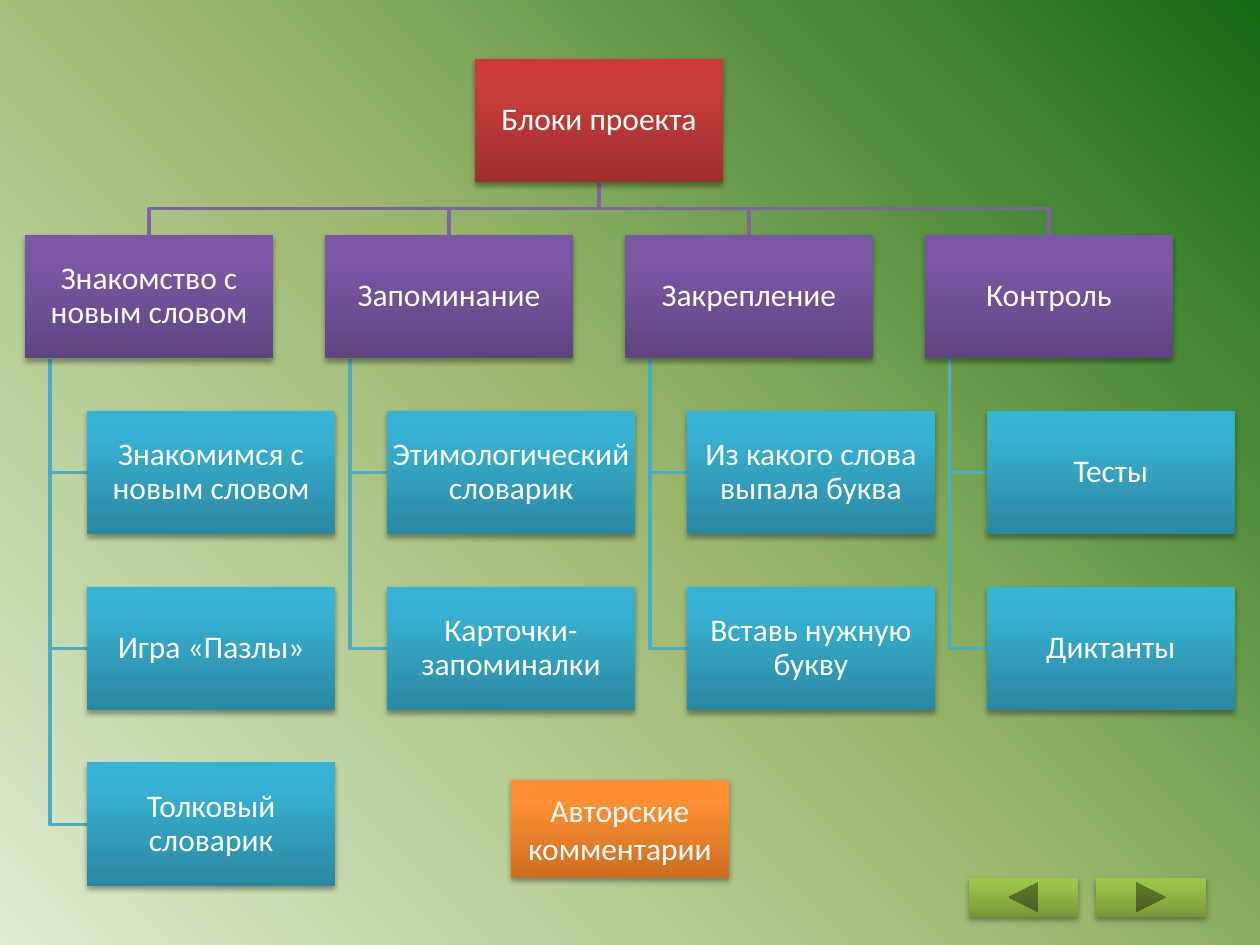
from dataclasses import dataclass
from lxml.etree import SubElement
from pptx import Presentation
from pptx.dml.color import RGBColor
from pptx.enum.shapes import MSO_SHAPE
from pptx.enum.text import MSO_ANCHOR, PP_ALIGN
from pptx.oxml.ns import qn
from pptx.util import Pt


@dataclass(frozen=True)
class Theme:
    font: str = "Calibri"
    size: float = 18
    line: float = 2
    text: str = "FFFFFF"
    shade: str = "000000"
    back: tuple = ((0, "DDEBCF"), (50, "9CB86E"), (100, "156B13"))
    red: tuple = ((0, "9C2F2D"), (80, "CB3E3A"), (100, "CE3B37"))
    purple: tuple = ((0, "5F4480"), (80, "7B58A6"), (100, "7C57A8"))
    blue: tuple = ((0, "2A88A2"), (80, "37B1D2"), (100, "34B4D6"))
    green: tuple = ((0, "779737"), (80, "9BC348"), (100, "9DC746"))
    orange: tuple = ((0, "CC6E20"), (80, "FF9034"), (100, "FF9136"))
    branch: str = "8064A2"
    twig: str = "4BACC6"


THEME = Theme()
ROOT = "Блоки проекта"
BLOCKS = {
    "Знакомство с новым словом": [
        "Знакомимся с новым словом", "Игра «Пазлы»", "Толковый словарик"],
    "Запоминание": ["Этимологический словарик", "Карточки-запоминалки"],
    "Закрепление": ["Из какого слова выпала буква", "Вставь нужную букву"],
    "Контроль": ["Тесты", "Диктанты"],
}


def blend(fill, owner, stops, angle):
    """Give fill, which lies inside the XML of owner, a linear gradient."""
    fill.gradient()
    fill.gradient_angle = angle
    group = owner.find(".//" + qn("a:gsLst"))
    for old in list(group):
        group.remove(old)
    for place, color in stops:
        stop = SubElement(group, qn("a:gs"), pos=str(place * 1000))
        SubElement(stop, qn("a:srgbClr"), val=color)


def shade(shape):
    """Drop a soft shadow straight down."""
    shape.shadow.inherit = False
    effects = shape.element.spPr.find(qn("a:effectLst"))
    outer = SubElement(effects, qn("a:outerShdw"), blurRad=str(Pt(3.15)),
                       dist=str(Pt(1.8)), dir="5400000", rotWithShape="0")
    color = SubElement(outer, qn("a:srgbClr"), val=THEME.shade)
    SubElement(color, qn("a:alpha"), val="35000")


def panel(slide, box, stops, kind=MSO_SHAPE.RECTANGLE):
    shape = slide.shapes.add_shape(kind, *map(Pt, box))
    blend(shape.fill, shape.element, stops, 90)
    shape.line.fill.background()
    shade(shape)
    return shape


def label(shape, text, inset=None, space=None):
    frame = shape.text_frame
    frame.word_wrap = True
    frame.vertical_anchor = MSO_ANCHOR.MIDDLE
    if inset is not None:
        frame.margin_left = frame.margin_right = Pt(inset)
        frame.margin_top = frame.margin_bottom = Pt(inset)
    para = frame.paragraphs[0]
    para.alignment = PP_ALIGN.CENTER
    para.line_spacing = space
    run = para.add_run()
    run.text = text
    run.font.name = THEME.font
    run.font.size = Pt(THEME.size)
    run.font.color.rgb = RGBColor.from_string(THEME.text)


def elbow(slide, color, start, *points):
    """Draw an open line with square turns."""
    path = slide.shapes.build_freeform(*map(Pt, start))
    path.add_line_segments([(Pt(x), Pt(y)) for x, y in points], close=False)
    shape = path.convert_to_shape()
    shape.fill.background()
    shape.line.color.rgb = RGBColor.from_string(color)
    shape.line.width = Pt(THEME.line)
    shape.shadow.inherit = False


def tree(slide, box):
    """Draw the chart; every size follows from the width of the box."""
    left, top, width = box
    count = len(BLOCKS)
    wide = width / ((count - 1) * 1.21 + 1.25)
    high = wide / 2
    step, drop = wide * 1.21, high * 1.42
    root_x = left + step * (count - 1) / 2
    mid = root_x + wide / 2
    bar = top + (high + drop) / 2
    cards = [(root_x, top, ROOT, THEME.red)]
    for col, (name, leaves) in enumerate(BLOCKS.items()):
        x, y = left + col * step, top + drop
        hub, trunk, leaf_x = x + wide / 2, x + wide * 0.1, x + wide * 0.25
        elbow(slide, THEME.branch, (mid, top + high),
              (mid, bar), (hub, bar), (hub, y))
        cards.append((x, y, name, THEME.purple))
        for row, leaf in enumerate(leaves, 1):
            leaf_y = y + row * drop
            turn = leaf_y + high / 2
            elbow(slide, THEME.twig, (trunk, y + high),
                  (trunk, turn), (leaf_x, turn))
            cards.append((leaf_x, leaf_y, leaf, THEME.blue))
    for x, y, text, stops in cards:
        label(panel(slide, (x, y, wide, high), stops), text, 0.9, 0.9)


def pager(slide, box):
    """Place the back and next buttons at the two ends of the box."""
    left, top, width, high = box
    wide = 62.6
    panel(slide, (left, top, wide, high), THEME.green,
          MSO_SHAPE.ACTION_BUTTON_BACK_OR_PREVIOUS)
    panel(slide, (left + width - wide, top, wide, high), THEME.green,
          MSO_SHAPE.ACTION_BUTTON_FORWARD_OR_NEXT)


def main():
    deck = Presentation()
    deck.slide_width, deck.slide_height = Pt(720), Pt(540)
    slide = deck.slides.add_slide(deck.slide_layouts[6])
    blend(slide.background.fill, slide.element, THEME.back, 45)
    tree(slide, (14.4, 33.5, 691.2))
    pager(slide, (553.5, 501.5, 135.5, 22.5))
    note = panel(slide, (292, 445.5, 124.5, 56), THEME.orange)
    label(note, "Авторские комментарии")
    deck.save("out.pptx")


if __name__ == "__main__":
    main()
